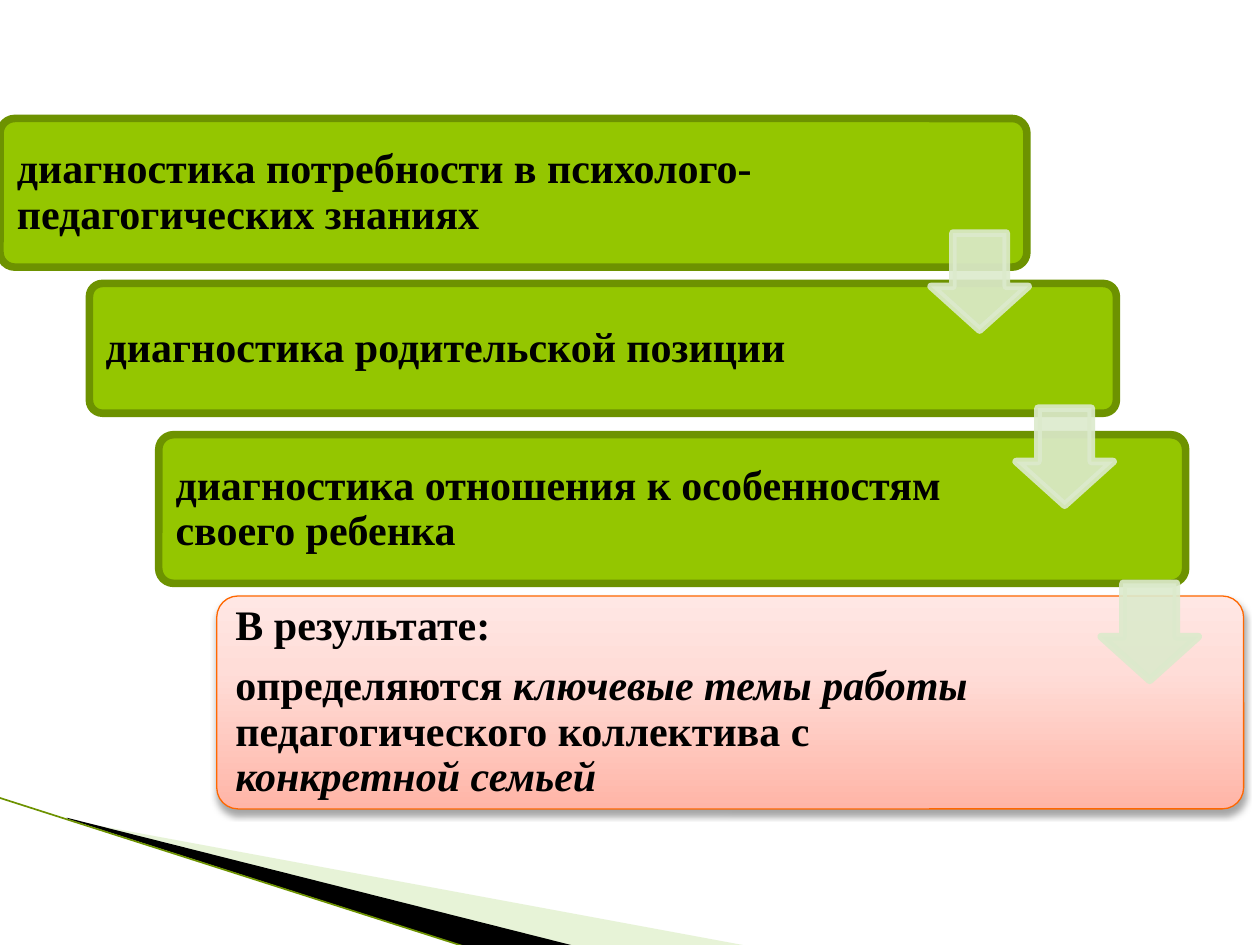
from lxml.etree import SubElement
from pptx import Presentation
from pptx.dml.color import RGBColor
from pptx.enum.shapes import MSO_CONNECTOR as Connector, MSO_SHAPE as Shape
from pptx.enum.text import MSO_ANCHOR as Anchor
from pptx.oxml.ns import qn
from pptx.util import Inches, Pt

# Content: each paragraph is a list of (text, italic) runs
STEPS = [
    [[("диагностика потребности в психолого-педагогических знаниях", False)]],
    [[("диагностика родительской позиции", False)]],
    [[("диагностика отношения к особенностям своего ребенка", False)]],
    [
        [("В результате:", False)],
        [("определяются ", False), ("ключевые темы работы ", True),
         ("педагогического коллектива с ", False), ("конкретной семьей", True)],
    ],
]

# Places: panel (left, top, height) and the width of its text
PANELS = [(0, 0.94, 1.18, 6.78), (0.71, 2.25, 1.03, 6.64),
          (1.26, 3.45, 1.18, 6.64), (1.72, 4.73, 1.69, 6.6)]
PANEL_WIDTH = 8.15
ARROW_START, ARROW_STEP, ARROW_SIZE = (7.39, 1.85), (0.675, 1.39), 0.77

# Corner wedges: points, colour name, opacity
WEDGES = [
    ([(0.55, 6.51), (5.95, 7.51), (4.56, 7.51), (0.55, 6.5)], "wedge", 40),
    ([(0.53, 6.49), (4.57, 7.51), (3.72, 7.52), (0.54, 6.5)], "ink", 100),
]
CORNER_LINE = [(-0.01, 6.33), (3.71, 7.52)]

THEME = {
    "font": "Times New Roman", "size": 24, "gap": 8.4,
    "thick": 4.33, "thin": 0.75, "corner": 0.95,
    "ink": "000000", "panel": "94C600", "edge": "6D9200",
    "result_edge": "FF6700", "arrow": "DCEACC", "wedge": "C3E19D",
    "result": [(0, "FFB5A7"), (65, "FFDDD8"), (100, "FFE7E4")],
}


def color(name):
    return RGBColor.from_string(THEME[name])


def set_opacity(fill_parent, percent):
    solid = fill_parent.find(qn("a:solidFill"))
    SubElement(solid[0], qn("a:alpha"), val=str(percent * 1000))


def style(shape, fill, edge=None, width=0):
    shape.shadow.inherit = False
    shape.fill.solid()
    shape.fill.fore_color.rgb = color(fill)
    if edge:
        shape.line.color.rgb = color(edge)
        shape.line.width = Pt(width)
    else:
        shape.line.fill.background()


def make_result(shape):
    """Upward gradient and a soft shadow below."""
    shape.fill.gradient()
    shape.fill.gradient_angle = 90
    properties = shape._element.spPr
    stops = properties.find(qn("a:gradFill")).find(qn("a:gsLst"))
    stops.clear()
    for position, value in THEME["result"]:
        stop = SubElement(stops, qn("a:gs"), pos=str(position * 1000))
        SubElement(stop, qn("a:srgbClr"), val=value)
    shadow = SubElement(properties.find(qn("a:effectLst")), qn("a:outerShdw"),
                        blurRad=str(Pt(4)), dist=str(Pt(3)), dir="5400000",
                        rotWithShape="0")
    tint = SubElement(shadow, qn("a:srgbClr"), val=THEME["ink"])
    SubElement(tint, qn("a:alpha"), val="35000")


def add_corner(slide):
    for points, fill, opacity in WEDGES:
        corners = [(Inches(x), Inches(y)) for x, y in points]
        builder = slide.shapes.build_freeform(*corners[0], scale=1.0)
        builder.add_line_segments(corners[1:], close=True)
        wedge = builder.convert_to_shape()
        style(wedge, fill)
        if opacity < 100:
            set_opacity(wedge._element.spPr, opacity)
    ends = [Inches(value) for point in CORNER_LINE for value in point]
    line = slide.shapes.add_connector(Connector.STRAIGHT, *ends)
    line.line.color.rgb = color("edge")
    line.line.width = Pt(THEME["corner"])
    SubElement(line._element.spPr, qn("a:effectLst"))


def add_panel(slide, paragraphs, place, is_result):
    left, top, height, text_width = place
    panel = slide.shapes.add_shape(Shape.ROUNDED_RECTANGLE, Inches(left), Inches(top),
                                   Inches(PANEL_WIDTH), Inches(height))
    panel.adjustments[0] = 0.1
    if is_result:
        style(panel, "panel", "result_edge", THEME["thin"])
        make_result(panel)
    else:
        style(panel, "panel", "edge", THEME["thick"])

    inset = height * 0.03
    box = slide.shapes.add_textbox(Inches(left + inset), Inches(top + inset),
                                   Inches(text_width), Inches(height - 2 * inset))
    frame = box.text_frame
    frame.word_wrap = True
    frame.vertical_anchor = Anchor.MIDDLE
    frame.margin_left = frame.margin_right = Inches(0.1)
    frame.margin_top = frame.margin_bottom = Inches(0.1)
    for index, runs in enumerate(paragraphs):
        para = frame.add_paragraph() if index else frame.paragraphs[0]
        para.line_spacing = 0.9
        para.space_after = Pt(THEME["gap"])
        for text, italic in runs:
            span = para.add_run()
            span.text = text
            span.font.name = THEME["font"]
            span.font.size = Pt(THEME["size"])
            span.font.bold = True
            span.font.italic = italic
            span.font.color.rgb = color("ink")


def add_arrow(slide, index):
    left, top = (start + index * step for start, step in zip(ARROW_START, ARROW_STEP))
    arrow = slide.shapes.add_shape(Shape.DOWN_ARROW, Inches(left), Inches(top),
                                   Inches(ARROW_SIZE), Inches(ARROW_SIZE))
    arrow.adjustments[0] = 0.55
    arrow.adjustments[1] = 0.45
    style(arrow, "arrow", "arrow", THEME["thick"])
    properties = arrow._element.spPr
    for parent in (properties, properties.find(qn("a:ln"))):
        set_opacity(parent, 90)


def main():
    deck = Presentation()
    deck.slide_width, deck.slide_height = Inches(10), Inches(7.5)
    page = deck.slides.add_slide(deck.slide_layouts[6])
    add_corner(page)
    # Staircase of steps, the last one being the result
    last = len(STEPS) - 1
    for index, (paragraphs, place) in enumerate(zip(STEPS, PANELS)):
        add_panel(page, paragraphs, place, index == last)
    # Arrows between neighbouring steps
    for index in range(last):
        add_arrow(page, index)
    deck.save("out.pptx")


if __name__ == "__main__":
    main()
